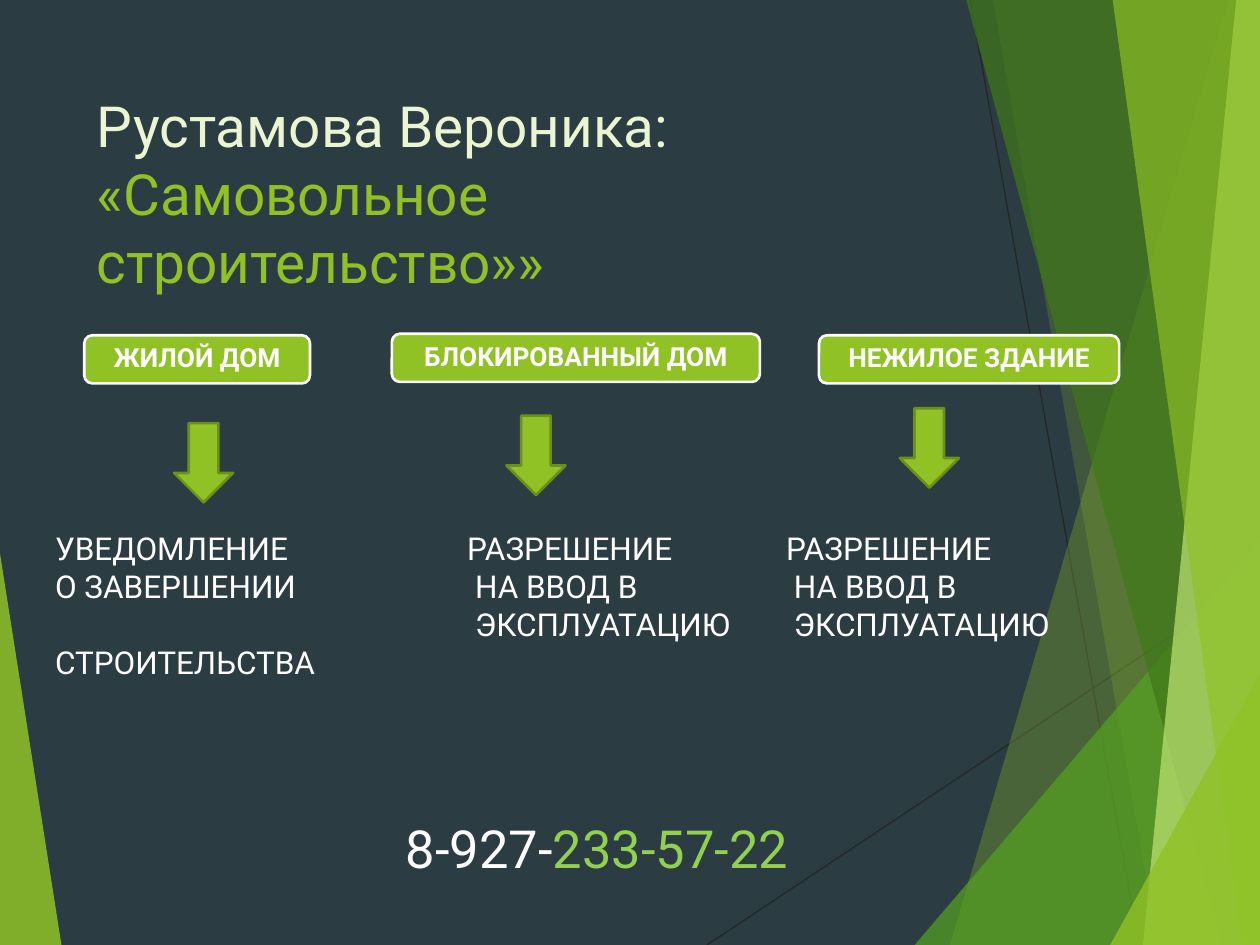
from lxml.etree import SubElement
from pptx import Presentation
from pptx.dml.color import RGBColor
from pptx.enum.shapes import MSO_CONNECTOR, MSO_SHAPE
from pptx.enum.text import MSO_ANCHOR, MSO_AUTO_SIZE, PP_ALIGN
from pptx.oxml.ns import qn
from pptx.util import Cm, Pt

BACKGROUND = RGBColor(0x2C, 0x3C, 0x43)
GREEN = RGBColor(0x90, 0xC2, 0x26)
MEDIUM_GREEN = RGBColor(0x54, 0xA0, 0x21)
DARK_GREEN = RGBColor(0x3F, 0x78, 0x19)
LIGHT_GREEN = RGBColor(0xC0, 0xE4, 0x74)
ARROW_EDGE = RGBColor(0x6B, 0x90, 0x1C)
PHONE_GREEN = RGBColor(0x92, 0xD0, 0x50)
PALE = RGBColor(0xEA, 0xF6, 0xD1)
WHITE = RGBColor(0xFF, 0xFF, 0xFF)
THIN_LINE = RGBColor(0x26, 0x26, 0x26)

WIDTH, HEIGHT = 25.4, 19.05


class SlideBuilder:
    font_name = "Roboto"

    def __init__(self, slide):
        self.slide = slide
        slide.background.fill.solid()
        slide.background.fill.fore_color.rgb = BACKGROUND

    def apply(self, target, values):
        for name, value in values.items():
            setattr(target, name, value)

    def add_text(self, paragraph, text, color, size, bold=False):
        run = paragraph.add_run()
        run.text = text
        self.apply(run.font, {"name": self.font_name, "size": Pt(size), "bold": bold})
        run.font.color.rgb = color

    def line(self, start, end):
        connector = self.slide.shapes.add_connector(
            MSO_CONNECTOR.STRAIGHT, *map(Cm, start + end))
        connector.line.color.rgb = THIN_LINE
        connector.line.width = Pt(0.75)
        SubElement(connector.element.spPr, qn("a:effectLst"))

    def facet(self, points, color, opacity):
        corners = [(Cm(x), Cm(y)) for x, y in points]
        builder = self.slide.shapes.build_freeform(*corners[0], scale=1.0)
        builder.add_line_segments(corners[1:], close=True)
        shape = builder.convert_to_shape()
        shape.shadow.inherit = False
        shape.fill.solid()
        shape.fill.fore_color.rgb = color
        shape.line.fill.background()
        color_element = shape.element.spPr.find(qn("a:solidFill"))[0]
        SubElement(color_element, qn("a:alpha"), val=str(opacity * 1000))

    def shape(self, kind, box, edge):
        shape = self.slide.shapes.add_shape(kind, *map(Cm, box))
        shape.shadow.inherit = False
        shape.fill.solid()
        shape.fill.fore_color.rgb = GREEN
        shape.line.color.rgb = edge
        shape.line.width = Pt(1.5)
        return shape

    def label(self, text, box):
        frame = self.shape(MSO_SHAPE.ROUNDED_RECTANGLE, box, WHITE).text_frame
        margins = dict.fromkeys(
            ("margin_left", "margin_top", "margin_right", "margin_bottom"), Cm(0.15))
        self.apply(frame, {"word_wrap": True, "vertical_anchor": MSO_ANCHOR.MIDDLE, **margins})
        paragraph = frame.paragraphs[0]
        self.apply(paragraph, {"alignment": PP_ALIGN.CENTER, "line_spacing": 0.9})
        self.add_text(paragraph, text, WHITE, 15, True)

    def arrow(self, box):
        self.shape(MSO_SHAPE.DOWN_ARROW, box, ARROW_EDGE)

    def text_box(self, box):
        frame = self.slide.shapes.add_textbox(*map(Cm, box)).text_frame
        self.apply(frame, {"word_wrap": True, "margin_right": 0})
        return frame

    def document(self, lines, box, last_gap):
        frame = self.text_box(box)
        for index, text in enumerate(lines):
            paragraph = frame.add_paragraph() if index else frame.paragraphs[0]
            self.add_text(paragraph, text, WHITE, 18)
        paragraph.space_before = Pt(last_gap)

    def phone(self, parts, box):
        frame = self.text_box(box)
        frame.margin_left = 0
        paragraph = frame.paragraphs[0]
        paragraph.alignment = PP_ALIGN.CENTER
        for text, color in parts:
            self.add_text(paragraph, text, color, 30)

    def title(self, speaker, topic, box):
        title = self.slide.shapes.title
        self.apply(title, dict(zip(("left", "top", "width", "height"), map(Cm, box))))
        title.element.getparent().append(title.element)
        frame = title.text_frame
        self.apply(frame, {"word_wrap": True, "auto_size": MSO_AUTO_SIZE.NONE,
                           "vertical_anchor": MSO_ANCHOR.TOP, "margin_right": Cm(1.5)})
        paragraph = frame.paragraphs[0]
        paragraph.alignment = PP_ALIGN.LEFT
        self.add_text(paragraph, speaker, PALE, 32.4)
        paragraph.add_line_break()
        self.add_text(paragraph, topic, GREEN, 32.4)


def band(top, bottom):
    return [(top, 0), (bottom, HEIGHT), (WIDTH, HEIGHT), (WIDTH, 0)]


def corner(bottom, right):
    return [(bottom, HEIGHT), (WIDTH, right), (WIDTH, HEIGHT)]


FACETS = [
    ([(0, 11.15), (1.24, HEIGHT), (0, HEIGHT)], GREEN, 85),
    (band(24.77, 19.15), GREEN, 30),
    (band(20.02, 23.34), GREEN, 20),
    (corner(18.44, 10.9), MEDIUM_GREEN, 72),
    (band(19.48, 24.64), DARK_GREEN, 70),
    (band(24.92, 23.04), LIGHT_GREEN, 70),
    (band(22.43, 25.04), GREEN, 65),
    (corner(22.38, 13.59), GREEN, 80),
]

NOTICE = ["УВЕДОМЛЕНИЕ", "О ЗАВЕРШЕНИИ", "СТРОИТЕЛЬСТВА"]
PERMIT = ["РАЗРЕШЕНИЕ", " НА ВВОД В", " ЭКСПЛУАТАЦИЮ"]

BUILDINGS = [
    ("ЖИЛОЙ ДОМ", (1.7, 6.76, 4.55, 0.97), (3.51, 8.53), NOTICE, 0.86, 22),
    ("БЛОКИРОВАННЫЙ ДОМ", (7.9, 6.73, 7.42, 0.97), (10.21, 8.38), PERMIT, 9.17, 0),
    ("НЕЖИЛОЕ ЗДАНИЕ", (16.51, 6.76, 6.05, 0.97), (18.14, 8.23), PERMIT, 15.6, 0),
]


def main():
    presentation = Presentation()
    presentation.slide_width, presentation.slide_height = Cm(WIDTH), Cm(HEIGHT)
    builder = SlideBuilder(presentation.slides.add_slide(presentation.slide_layouts[5]))
    builder.line((14.25, HEIGHT), (WIDTH, 11.63))
    builder.line((19.56, 0), (22.96, HEIGHT))
    for points, color, opacity in FACETS:
        builder.facet(points, color, opacity)
    builder.title("Рустамова Вероника:", "«Самовольное строительство»»", (1.7, 1.7, 17.63, 3.66))
    builder.phone([("8-927-", WHITE), ("233-57-22", PHONE_GREEN)], (6.17, 16.33, 11.73, 1.55))
    for name, label_box, arrow_corner, lines, text_left, last_gap in BUILDINGS:
        builder.label(name, label_box)
        builder.arrow(arrow_corner + (1.19, 1.6))
        builder.document(lines, (text_left, 10.54, 5.87, 2.57), last_gap)
    presentation.save("out.pptx")


if __name__ == "__main__":
    main()
